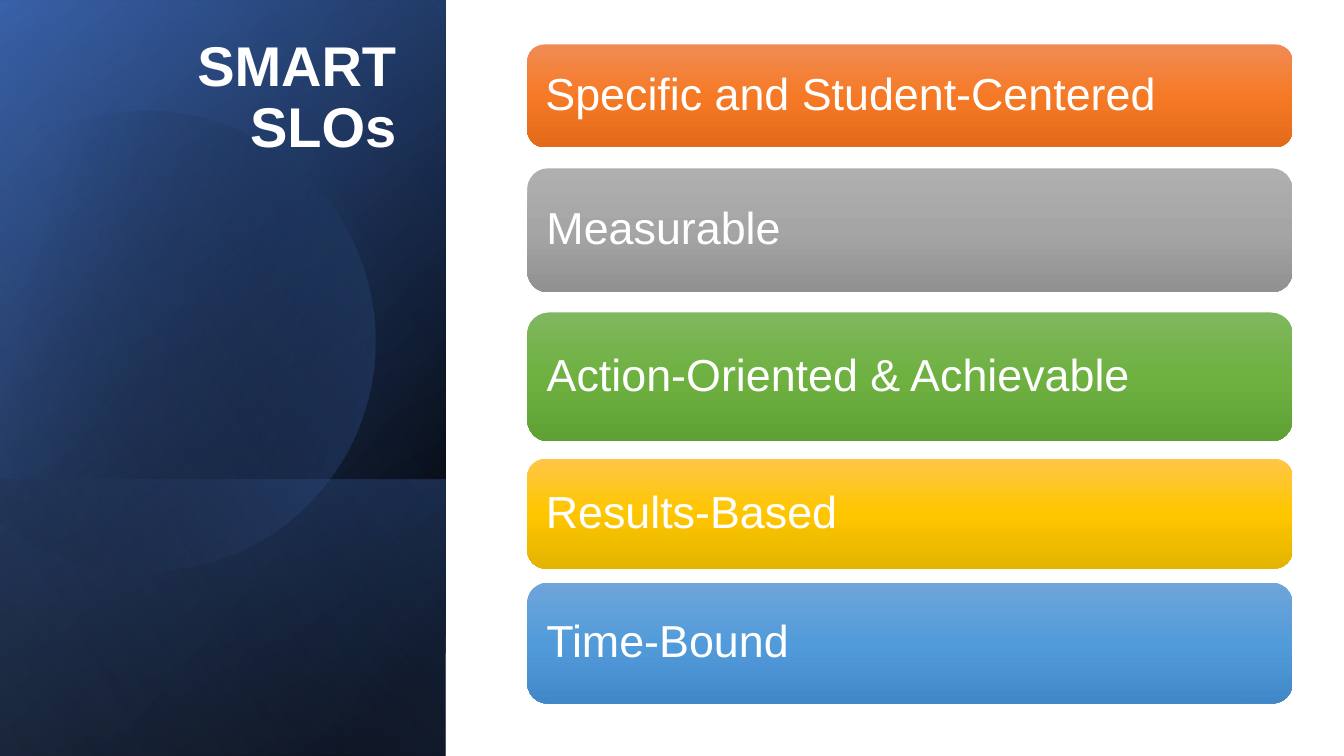
"""Build the SMART SLOs slide: a shaded title panel and five gradient bars."""
from math import cos, radians, sin

from lxml.etree import SubElement
from pptx import Presentation
from pptx.dml.color import RGBColor
from pptx.enum.shapes import MSO_SHAPE
from pptx.enum.text import MSO_ANCHOR, MSO_AUTO_SIZE, PP_ALIGN
from pptx.oxml.ns import qn
from pptx.util import Inches, Pt

COLORS = {
    "white": "FFFFFF", "black": "000000", "navy": "2F5496",
    "blue": "4472C4", "pale": "8DA9DB",
    "orange": ("F08B54", "F67A26", "E36A18"),
    "gray": ("AFAFAF", "A5A5A5", "919191"),
    "green": ("7FB75F", "6EB141", "5FA134"),
    "gold": ("FFC647", "FFC600", "E3B400"),
    "sky": ("6EA5DA", "529BDA", "4188C8"),
}
TITLE_FONT = {"name": "Arial", "size": Pt(40), "bold": True}
BAR_FONT = {"name": "Arial", "size": Pt(32), "bold": False}
PANEL = (-1.54, 1.54, 7.5, 4.42)
PANEL_BASE = (PANEL, 50, [(0, "black", 100), (8, "black", 100), (100, "navy", 100)])
PANEL_GLOW = ((-1.54, 1.55, 7.5, 4.42), 30,
              [(0, "black", 0), (99, "blue", 46), (100, "blue", 46)])
PANEL_FOOT = ((0.84, 3.92, 2.74, 4.42), 130,
              [(0, "blue", 29), (2, "blue", 29), (100, "black", 30)])
PANEL_SHEEN = (PANEL, 120, [(0, "black", 0), (99, "pale", 11), (100, "pale", 11)])
DISC_BOX = (-0.55, 1.06, 4.27, 4.57)
DISC_TURN = 343.9
DISC_CURVE = [
    [(1.49, 1.1)],
    [(2.46, 1.12), (3.35, 1.77), (3.63, 2.75)],
    [(3.98, 3.97), (3.28, 5.23), (2.07, 5.58)],
    [(1.31, 5.8), (0.53, 5.61), (-0.03, 5.14)],
    [(-0.15, 5.03)],
    [(-0.15, 1.75)],
    [(0, 1.61)],
    [(0.23, 1.42), (0.5, 1.28), (0.8, 1.19)],
    [(1.03, 1.13), (1.26, 1.1), (1.49, 1.1)],
]
BARS = [
    ("Specific and Student-Centered", "orange", 0.44, 1.02),
    ("Measurable", "gray", 1.67, 1.23),
    ("Action-Oriented & Achievable", "green", 3.1, 1.28),
    ("Results-Based", "gold", 4.55, 1.09),
    ("Time-Bound", "sky", 5.78, 1.2),
]


def set_gradient(shape, angle, stops):
    """Fill a shape with (position, hex colour, opacity) stops, without line or shadow."""
    shape.shadow.inherit = False
    shape.line.fill.background()
    shape.fill.gradient()
    grad = shape.element.spPr.find(qn("a:gradFill"))
    for child in list(grad):
        grad.remove(child)
    grad.set("rotWithShape", "1")
    stop_list = SubElement(grad, qn("a:gsLst"))
    for position, color, opacity in stops:
        gs = SubElement(stop_list, qn("a:gs"), pos=str(position * 1000))
        clr = SubElement(gs, qn("a:srgbClr"), val=color)
        if opacity < 100:
            SubElement(clr, qn("a:alpha"), val=str(opacity * 1000))
    SubElement(grad, qn("a:lin"), ang=str(angle * 60000), scaled="0")


def named_stops(stops):
    """Replace colour names in gradient stops by their hex values."""
    return [(position, COLORS[name], opacity) for position, name, opacity in stops]


def place(shape, box):
    """Move and size a shape to a box in inches."""
    for name, value in zip(("left", "top", "width", "height"), box):
        setattr(shape, name, Inches(value))


def write_text(shape, text, font, align, anchor, insets):
    """Write one formatted paragraph into a shape."""
    tf = shape.text_frame
    tf.word_wrap = True
    tf.auto_size = MSO_AUTO_SIZE.NONE
    tf.vertical_anchor = anchor
    tf.margin_left = tf.margin_right = Inches(insets[0])
    tf.margin_top = tf.margin_bottom = Inches(insets[1])
    p = tf.paragraphs[0]
    p.alignment, p.line_spacing, p.space_before = align, 0.9, Pt(0)
    r = p.add_run()
    r.text = text
    for name, value in font.items():
        setattr(r.font, name, value)
    r.font.color.rgb = RGBColor.from_string(COLORS["white"])


def add_panel(s, box, angle, stops):
    """Add a mirrored rectangle turned by 90 degrees."""
    sp = s.shapes.add_shape(MSO_SHAPE.RECTANGLE, *map(Inches, box))
    sp.rotation = 90
    sp.element.spPr.xfrm.set("flipH", "1")
    set_gradient(sp, angle, named_stops(stops))


def to_disc_frame(point):
    """Turn a slide point back into the disc's own unrotated box, in EMU."""
    left, top, width, height = DISC_BOX
    turn = radians(-DISC_TURN)
    dx, dy = point[0] - left - width / 2, point[1] - top - height / 2
    return (Inches(width / 2 + dx * cos(turn) - dy * sin(turn)),
            Inches(height / 2 + dx * sin(turn) + dy * cos(turn)))


def add_disc(s):
    """Add a turned translucent disc with curved edges, cut off on its left."""
    segments = [[to_disc_frame(point) for point in part] for part in DISC_CURVE]
    ends = [part[-1] for part in segments]
    builder = s.shapes.build_freeform(*ends[0])
    builder.add_line_segments(ends[1:], close=True)
    sp = builder.convert_to_shape()
    place(sp, DISC_BOX)
    sp.rotation = DISC_TURN
    outline = sp.element.spPr.find(".//" + qn("a:path"))
    for child in list(outline):
        outline.remove(child)
    outline.set("w", str(sp.width))
    outline.set("h", str(sp.height))
    for i, part in enumerate(segments):
        tag = "a:cubicBezTo" if len(part) == 3 else "a:lnTo" if i else "a:moveTo"
        step = SubElement(outline, qn(tag))
        for x, y in part:
            SubElement(step, qn("a:pt"), x=str(int(x)), y=str(int(y)))
    SubElement(outline, qn("a:close"))
    stops = [(0, "black", 0), (29, "black", 0), (100, "blue", 43)]
    set_gradient(sp, 30, named_stops(stops))


def add_title(s, text):
    """Place the title placeholder on top of the panel."""
    title = s.shapes.title
    place(title, (0.62, 0.28, 3.41, 1.35))
    write_text(title, text, TITLE_FONT, PP_ALIGN.RIGHT, MSO_ANCHOR.BOTTOM, (0.1, 0.05))
    s.shapes.element.append(title.element)


def add_bar(s, text, color, top, height):
    """Add a rounded bar with its label."""
    sp = s.shapes.add_shape(MSO_SHAPE.ROUNDED_RECTANGLE, Inches(5.23), Inches(top),
                            Inches(7.59), Inches(height))
    sp.adjustments[0] = 0.167
    set_gradient(sp, 90, [(i * 50, c, 100) for i, c in enumerate(COLORS[color])])
    write_text(sp, text, BAR_FONT, PP_ALIGN.LEFT, MSO_ANCHOR.MIDDLE, (0.13, 0.13))


def main():
    """Build and save the slide."""
    prs = Presentation()
    prs.slide_width, prs.slide_height = Inches(13.33), Inches(7.5)
    s = prs.slides.add_slide(prs.slide_layouts[5])
    for panel in (PANEL_BASE, PANEL_GLOW, PANEL_FOOT):
        add_panel(s, *panel)
    add_disc(s)
    add_panel(s, *PANEL_SHEEN)
    add_title(s, "SMART SLOs")
    for bar in BARS:
        add_bar(s, *bar)
    prs.save("out.pptx")


if __name__ == "__main__":
    main()
